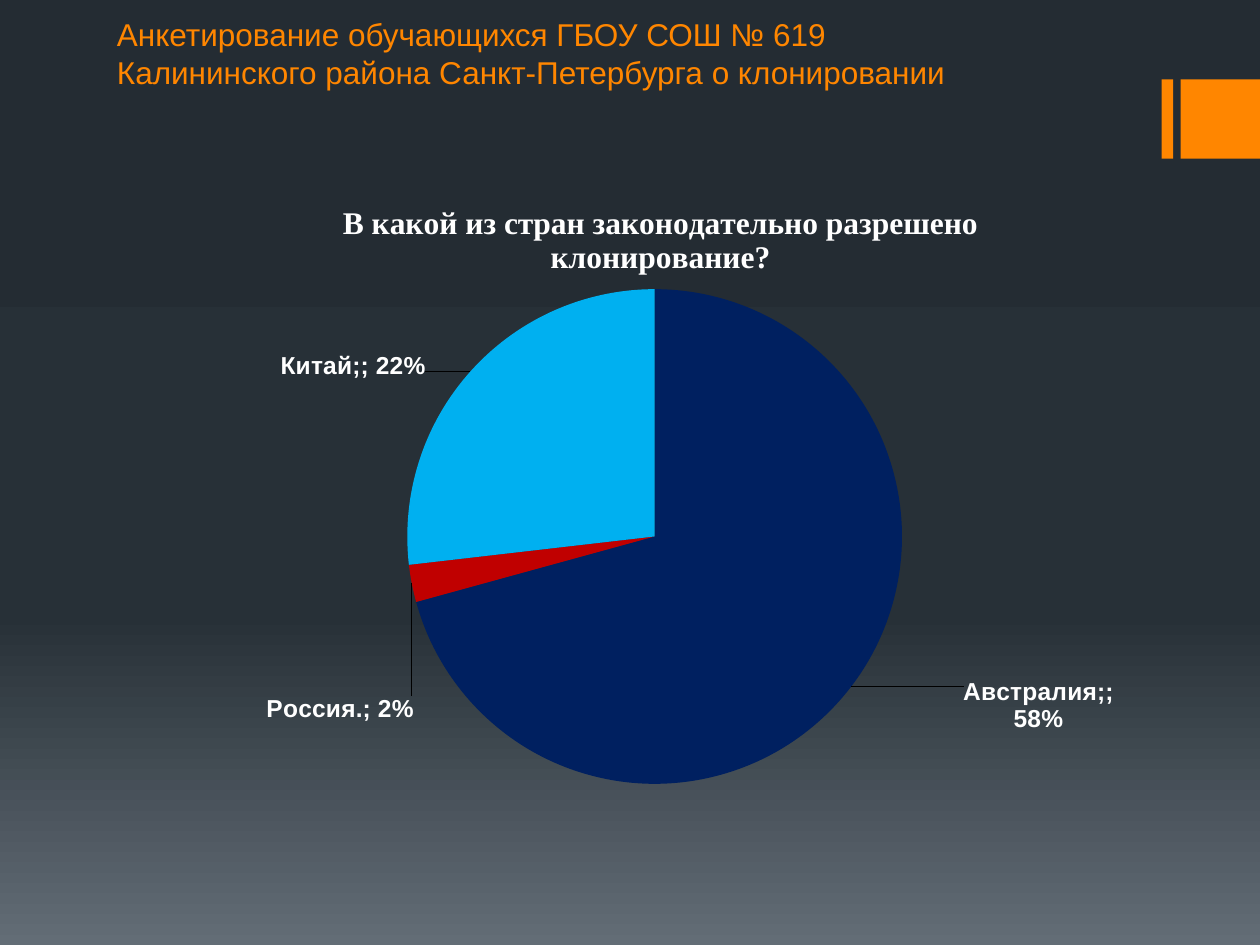
import copy
from typing import NamedTuple

import lxml.etree
import pptx
import pptx.chart.data
import pptx.dml.color
import pptx.enum.chart
import pptx.enum.shapes
import pptx.enum.text
import pptx.oxml
import pptx.oxml.ns
import pptx.util

Inches = pptx.util.Inches
Pt = pptx.util.Pt
qn = pptx.oxml.ns.qn

ORANGE = "FF8600"
WHITE = "FFFFFF"


class Bar(NamedTuple):
    left: float
    width: float


class Slice(NamedTuple):
    name: str
    share: float
    color: str
    dx: float
    dy: float


BARS = [Bar(9.22, 0.09), Bar(9.37, 0.63)]
STOPS = [(0, "242C33"), (0.65, "273037"), (1, "636D76")]
SLICES = [
    Slice("Австралия;", 0.58, "002060", 0.11, -0.02),
    Slice("Россия.", 0.02, "C00000", 0.01, 0.17),
    Slice("Китай;", 0.22, "00B0F0", -0.04, 0.02),
]


def paint(fmt, color: str) -> None:
    if hasattr(fmt, "solid"):
        fmt.solid()
        fmt = fmt.fore_color
    fmt.rgb = pptx.dml.color.RGBColor.from_string(color)


def style(font, *, size: float, face: str = "Arial", color: str = WHITE,
          bold: bool = False) -> None:
    font.size = Pt(size)
    font.name = face
    font.bold = bold
    paint(font.fill, color)


def write(frame, text: str, **form) -> None:
    run = frame.paragraphs[0].add_run()
    run.text = text
    style(run.font, **form)


def shade(slide) -> None:
    fill = slide.background.fill
    fill.gradient()
    fill.gradient_angle = 270
    first = slide.background._cSld.find(".//" + qn("a:gs"))
    first.addnext(copy.deepcopy(first))
    for stop, (place, color) in zip(fill.gradient_stops, STOPS):
        stop.position = place
        paint(stop.color, color)


def draw_bar(slide, bar: Bar) -> None:
    shape = slide.shapes.add_shape(
        pptx.enum.shapes.MSO_SHAPE.RECTANGLE,
        Inches(bar.left), Inches(0.63), Inches(bar.width), Inches(0.63))
    shape.shadow.inherit = False
    paint(shape.fill, ORANGE)
    shape.line.fill.background()


def layout(inner: bool = False, **spots: float):
    node = lxml.etree.Element(qn("c:layout"))
    grid = lxml.etree.SubElement(node, qn("c:manualLayout"))
    if inner:
        lxml.etree.SubElement(grid, qn("c:layoutTarget"), val="inner")
    if inner or "title" in spots:
        for key in ("xMode", "yMode"):
            lxml.etree.SubElement(grid, qn("c:" + key), val="edge")
    for key in ("x", "y", "w", "h"):
        if key in spots:
            lxml.etree.SubElement(grid, qn("c:" + key), val=str(spots[key]))
    return node


def place(parent, node, after: str = "") -> None:
    old = parent.find(qn("c:layout"))
    if old is not None:
        parent.remove(old)
    if after:
        parent.find(qn(after)).addnext(node)
    else:
        parent.insert(0, node)


def tag(series, index: int, part: Slice) -> None:
    point = series.points[index]
    paint(point.format.fill, part.color)
    label = point.data_label
    style(label.font, size=14, bold=True)
    label.position = pptx.enum.chart.XL_LABEL_POSITION.OUTSIDE_END
    node = series._element.findall(".//" + qn("c:dLbl"))[index]
    node.find(qn("c:showCatName")).set("val", "1")
    place(node, layout(x=part.dx, y=part.dy), "c:idx")
    form = lxml.etree.Element(qn("c:numFmt"), formatCode="0%", sourceLinked="0")
    node.find(qn("c:layout")).addnext(form)
    lxml.etree.SubElement(node, qn("c:separator")).text = "; "


def draw_pie(slide) -> None:
    data = pptx.chart.data.CategoryChartData(number_format="0%")
    data.categories = [part.name for part in SLICES]
    data.add_series("Series 1", [part.share for part in SLICES])
    chart = slide.shapes.add_chart(
        pptx.enum.chart.XL_CHART_TYPE.PIE,
        Inches(1.3), Inches(1.31), Inches(7.64), Inches(5.16), data).chart
    style(chart.font, size=10)
    chart.has_legend = False
    write(chart.chart_title.text_frame,
          "В какой из стран законодательно разрешено клонирование?",
          size=18, face="Times New Roman", bold=True)
    place(chart.chart_title._element, layout(title=1, x=0.18, y=0.05), "c:tx")
    area = chart._chartSpace.find(".//" + qn("c:plotArea"))
    place(area, layout(True, x=0.253, y=0.191, w=0.514, h=0.761))
    plot = chart.plots[0]
    plot.vary_by_categories = True
    series = plot.series[0]
    labels = series.data_labels
    style(labels.font, size=14, bold=True)
    labels.number_format = "0%"
    labels.number_format_is_linked = False
    labels.show_value = True
    labels.show_category_name = True
    for index, part in enumerate(SLICES):
        tag(series, index, part)


def main() -> None:
    deck = pptx.Presentation()
    deck.slide_width = Inches(10)
    deck.slide_height = Inches(7.5)
    slide = deck.slides.add_slide(deck.slide_layouts[6])
    shade(slide)
    for bar in BARS:
        draw_bar(slide, bar)
    box = slide.shapes.add_textbox(
        Inches(0.83), Inches(0.07), Inches(7.32), Inches(0.71))
    frame = box.text_frame
    frame.word_wrap = True
    frame.auto_size = pptx.enum.text.MSO_AUTO_SIZE.SHAPE_TO_FIT_TEXT
    write(frame, "Анкетирование обучающихся ГБОУ СОШ № 619 "
          "Калининского района Санкт-Петербурга о клонировании",
          size=18, color=ORANGE)
    draw_pie(slide)
    deck.save("out.pptx")


if __name__ == "__main__":
    main()
